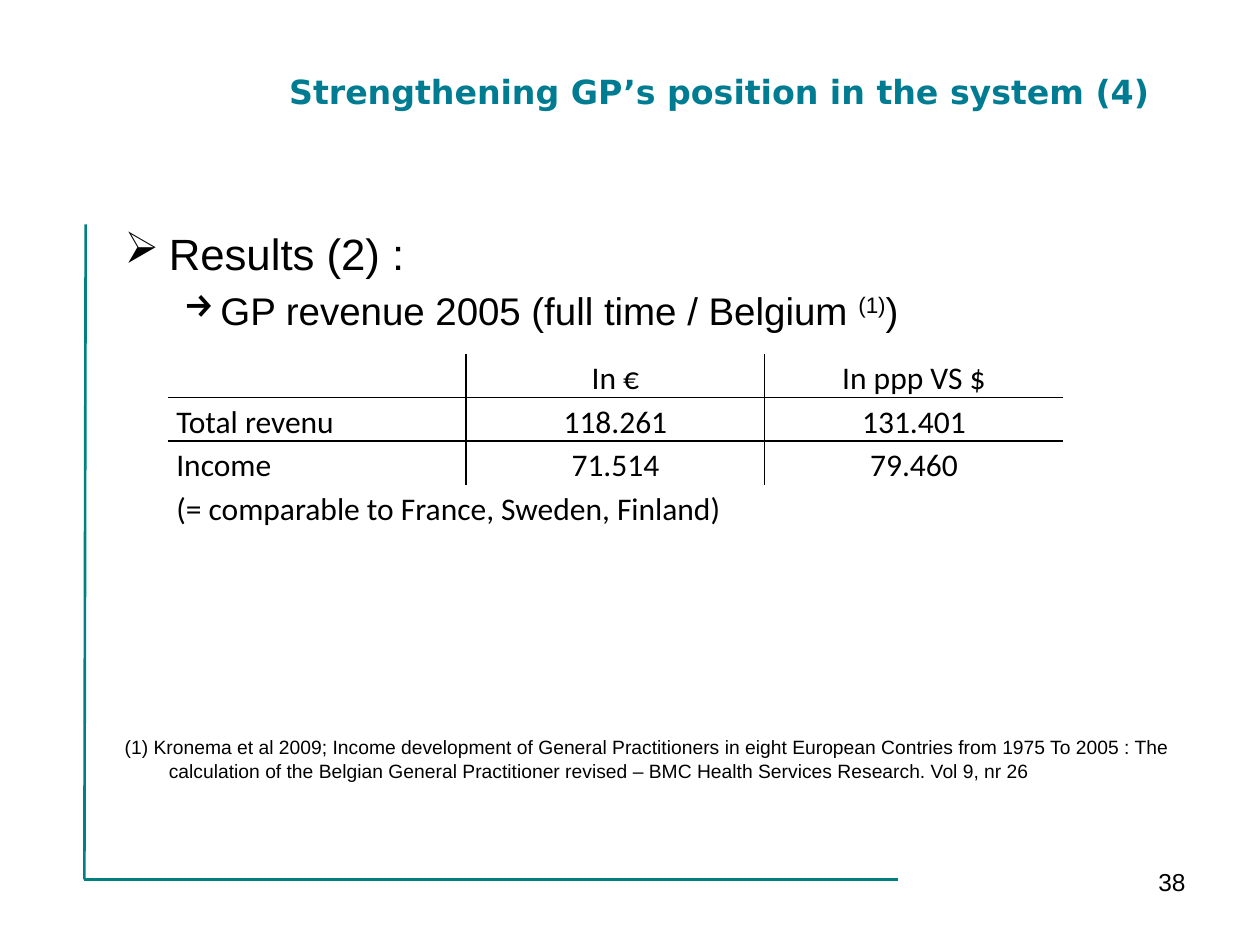
"""Build the slide on the position of general practitioners: revenue table and source."""
from lxml.etree import SubElement
from pptx import Presentation
from pptx.dml.color import RGBColor
from pptx.enum.shapes import MSO_CONNECTOR as Connector
from pptx.enum.text import MSO_ANCHOR as Anchor, PP_ALIGN as Align
from pptx.oxml import parse_xml
from pptx.oxml.ns import nsdecls, qn
from pptx.util import Inches, Pt

deck = Presentation()
deck.slide_width, deck.slide_height = Inches(10), Inches(7.5)
page = deck.slides.add_slide(deck.slide_layouts[6])
COLUMN, ROW = deck.slide_width // 1000, deck.slide_height // 750
TEAL, TITLE_BLUE, BLACK = "008080", "007C92", "000000"


def write(para, text, size, face="Arial", color=BLACK, **formats):
    for name, value in formats.items():
        setattr(para, name, value)
    span = para.add_run()
    span.text = text
    for name, value in {"size": Pt(size), "name": face, "bold": color == TITLE_BLUE}.items():
        setattr(span.font, name, value)
    span.font.color.rgb = RGBColor.from_string(color)
    return span


def add_box(left, top, width, height, anchor=Anchor.TOP):
    frame = page.shapes.add_textbox(left * COLUMN, top * ROW, width * COLUMN, height * ROW).text_frame
    margins = {"margin_left": 9 * COLUMN, "margin_right": 9 * COLUMN,
               "margin_top": 5 * ROW, "margin_bottom": 5 * ROW}
    for name, value in {"word_wrap": True, "vertical_anchor": anchor, **margins}.items():
        setattr(frame, name, value)
    return frame


for start_x, start_y in [(68, 178), (713, 698)]:
    rule = page.shapes.add_connector(
        Connector.STRAIGHT, start_x * COLUMN, start_y * ROW, 67 * COLUMN, 698 * ROW)
    rule.line.width = Pt(1.5)
    rule.line.color.rgb = RGBColor.from_string(TEAL)
    SubElement(rule._element.spPr, qn("a:effectLst"))

title = add_box(201, 30, 749, 85, Anchor.MIDDLE)
write(title.paragraphs[0], "Strengthening GP’s position in the system (4) ", 19,
      "DejaVu Sans", TITLE_BLUE, alignment=Align.CENTER)

results = add_box(90, 175, 860, 100)
footnote = add_box(90, 579, 860, 60)
heading, topic, source = results.paragraphs[0], results.add_paragraph(), footnote.paragraphs[0]
for para, margin, hanging, bullet in [(heading, 35, 35, "➢"), (topic, 76, 29, "→"), (source, 35, 35, "")]:
    properties = para._p.get_or_add_pPr()
    properties.set("marL", str(margin * COLUMN))
    properties.set("indent", str(-hanging * COLUMN))
    if bullet:
        SubElement(properties, qn("a:buChar")).set("char", bullet)

write(heading, "Results (2) :", 25)
topic.space_before = Pt(4.4)
for text, baseline in [("GP revenue 2005 (full time / Belgium ", 0), ("(1)", 30000), (")", 0)]:
    write(topic, text, 22)._r.get_or_add_rPr().set("baseline", str(baseline))
write(source, "(1) Kronema et al 2009; Income development of General Practitioners in eight "
      "European Contries from 1975 To 2005 : The calculation of the Belgian General "
      "Practitioner revised – BMC Health Services Research. Vol 9, nr 26", 11)

number = add_box(717, 683, 233, 52)
write(number.paragraphs[0], "38", 14, alignment=Align.RIGHT)

revenue = [
    ["", "In €", "In ppp VS $"],
    ["Total revenu", "118.261", "131.401"],
    ["Income", "71.514", "79.460"],
    ["(= comparable to France, Sweden, Finland)", "", ""],
]
table = page.shapes.add_table(4, 3, 133 * COLUMN, 281 * ROW, 711 * COLUMN, 138 * ROW).table
table.first_row = table.horz_banding = False
table._tbl.tblPr.find(qn("a:tableStyleId")).text = "{2D5ABB26-0587-4C30-8999-92F81FD0307C}"
for line in table.rows:
    line.height = 34 * ROW
table.cell(3, 0).merge(table.cell(3, 2))

for row, texts in enumerate(revenue):
    for column, text in enumerate(texts):
        cell = table.cell(row, column)
        cell.fill.background()
        for name, value in {"margin_left": 7 * COLUMN, "margin_right": 7 * COLUMN,
                            "margin_top": 0, "margin_bottom": 0}.items():
            setattr(cell, name, value)
        borders = {"L": row < 3 and column > 0, "R": row < 3 and column < 2,
                   "T": row == 1, "B": row == 0}
        shown = [side for side, visible in borders.items() if visible]
        for position, side in enumerate(shown):
            cell._tc.get_or_add_tcPr().insert(position, parse_xml(
                f'<a:ln{side} {nsdecls("a")} w="{Pt(1)}"><a:solidFill>'
                f'<a:srgbClr val="{BLACK}"/></a:solidFill></a:ln{side}>'))
        if text or row == 0:
            write(cell.text_frame.paragraphs[0], text, 18, "Calibri", line_spacing=1.15,
                  alignment=Align.CENTER if column else Align.LEFT)

deck.save("out.pptx")
